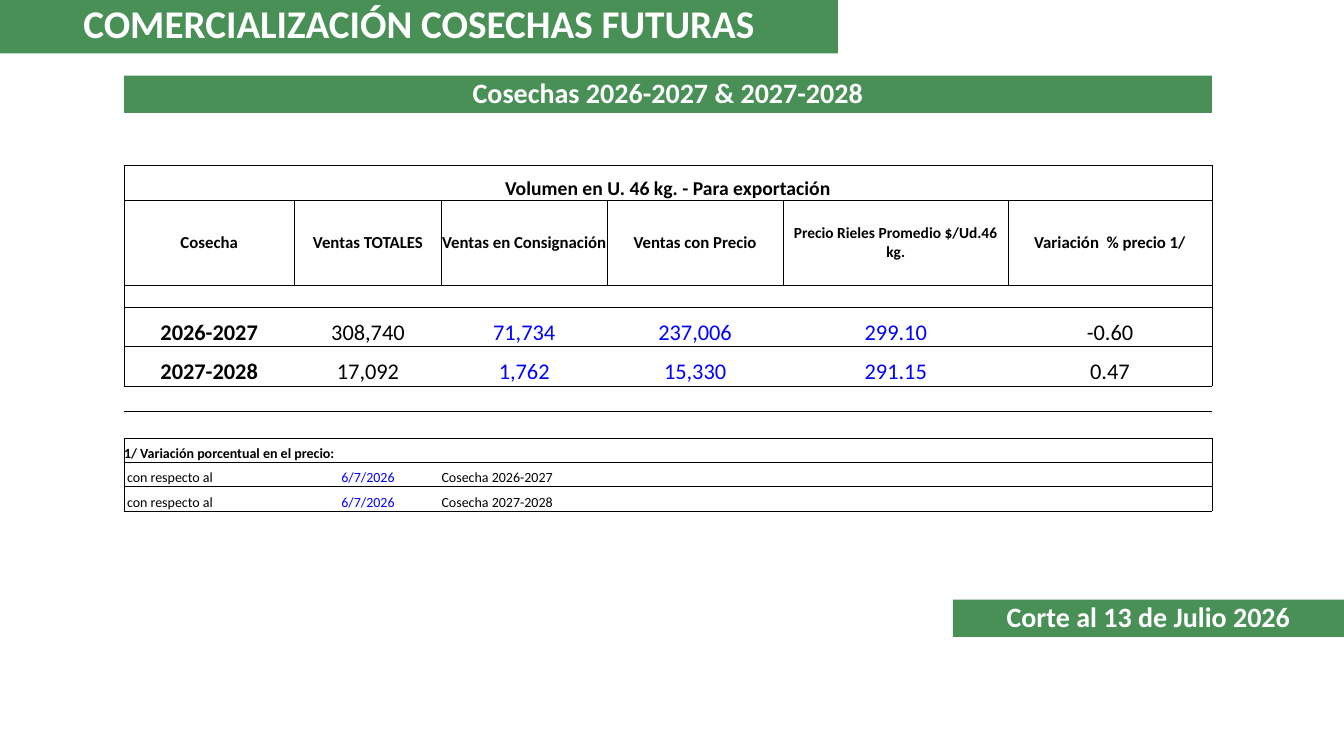
from dataclasses import dataclass
from lxml import etree
from pptx import Presentation
from pptx.dml.color import RGBColor
from pptx.enum.shapes import MSO_SHAPE
from pptx.enum.text import MSO_ANCHOR, MSO_AUTO_SIZE, PP_ALIGN
from pptx.oxml.ns import qn
from pptx.util import Inches, Pt

RECT = MSO_SHAPE.RECTANGLE
TOP, MID, LOW = MSO_ANCHOR.TOP, MSO_ANCHOR.MIDDLE, MSO_ANCHOR.BOTTOM
LEFT, MIDDLE = PP_ALIGN.LEFT, PP_ALIGN.CENTER

TITLE = "COMERCIALIZACIÓN COSECHAS FUTURAS"
CROPS = "Cosechas 2026-2027 & 2027-2028"
CUTOFF = "Corte al 13 de Julio 2026"
VOLUME = "Volumen en U. 46 kg. - Para exportación"
HEADS = ["Cosecha", "Ventas TOTALES", "Ventas en Consignación",
         "Ventas con Precio", "Precio Rieles Promedio $/Ud.46 kg.",
         "Variación  % precio 1/"]
SALES = [
    ["2026-2027", "308,740", "71,734", "237,006", "299.10", "-0.60"],
    ["2027-2028", "17,092", "1,762", "15,330", "291.15", "0.47"],
]
NOTE = "1/ Variación porcentual en el precio:"
NOTES = [
    ["con respecto al", "6/7/2026", "Cosecha 2026-2027"],
    ["con respecto al", "6/7/2026", "Cosecha 2027-2028"],
]
GRID = [[VOLUME], HEADS, [], *SALES, [], [], [NOTE], *NOTES]


@dataclass(frozen=True)
class Theme:
    font: str = "Calibri"
    green: str = "499057"
    white: str = "FFFFFF"
    black: str = "000000"
    blue: str = "0000FF"
    title: int = 28
    band: int = 20
    volume: int = 14
    head: int = 12
    price: int = 11
    sales: int = 16
    note: int = 10
    rule: float = 0.5


LOOK = Theme()
WIDE, HIGH = 13.33, 7.5
EDGE, SPAN = 1.23, 10.79
COLS = [1.69, 1.46, 1.64, 1.75, 2.23, 2.02]
ROWS = [0.35, 0.84, 0.22, 0.39, 0.39, 0.25, 0.27, 0.24, 0.24, 0.24]
LAST = len(COLS) - 1
RULED = {-1, 0, 1, 3, 4, 6, 8, 9}  # rows with a line below; -1 is the top edge
GAPS = {5, 6}  # rows between the two boxes
BOXED = {0, 1}  # rows with a line around every cell
NO_STYLE = "{2D5ABB26-0587-4C30-8999-92F81FD0307C}"


def write(frame, text, size, color, bold, align):
    frame.text = text
    par = frame.paragraphs[0]
    par.alignment = align
    for run in par.runs:
        font = run.font
        font.name, font.size, font.bold = LOOK.font, Pt(size), bold
        font.color.rgb = RGBColor.from_string(color)
    return par


def band(shape, box, text, size, anchor):
    """Turn a shape into a green strip with white text."""
    shape.left, shape.top, shape.width, shape.height = map(Inches, box)
    shape.fill.solid()
    shape.fill.fore_color.rgb = RGBColor.from_string(LOOK.green)
    shape.line.fill.background()
    frame = shape.text_frame
    frame.word_wrap = True
    frame.auto_size = MSO_AUTO_SIZE.NONE
    frame.vertical_anchor = anchor
    par = write(frame, text, size, LOOK.white, True, MIDDLE)
    par.line_spacing = 0.9


def style(row, col):
    """Give size, colour, boldness and alignment of a table cell."""
    if row == 0:
        return LOOK.volume, LOOK.black, True, MIDDLE
    if row == 1:
        size = LOOK.price if col == 4 else LOOK.head
        return size, LOOK.black, True, MIDDLE
    if row in (3, 4):
        color = LOOK.blue if 2 <= col <= 4 else LOOK.black
        return LOOK.sales, color, col == 0, MIDDLE
    if row > 7 and col == 1:
        return LOOK.note, LOOK.blue, False, MIDDLE
    return LOOK.note, LOOK.black, row == 7, LEFT


def outline(cell, row, col):
    boxed, gap = row in BOXED, row in GAPS
    sides = {
        "L": boxed or (col == 0 and not gap),
        "R": boxed or (col == LAST and not gap),
        "T": row - 1 in RULED,
        "B": row in RULED,
    }
    props = cell._tc.get_or_add_tcPr()
    for side, shown in sides.items():
        if shown:
            line = etree.SubElement(props, qn(f"a:ln{side}"),
                                    w=str(Pt(LOOK.rule)))
            fill = etree.SubElement(line, qn("a:solidFill"))
            etree.SubElement(fill, qn("a:srgbClr"), val=LOOK.black)


def fill_cell(cell, row, col):
    text = GRID[row][col] if col < len(GRID[row]) else ""
    cell.margin_left = cell.margin_right = 0
    cell.margin_top = cell.margin_bottom = 0
    if row > 7 and col == 0:
        cell.margin_left = Inches(0.03)
    cell.vertical_anchor = MID if row == 1 else LOW
    if text:
        write(cell.text_frame, text, *style(row, col))
    else:
        par = cell.text_frame.paragraphs[0]._p
        etree.SubElement(par, qn("a:endParaRPr"), sz=str(LOOK.note * 100))
    if not cell.is_spanned:
        outline(cell, row, col)
    cell.fill.background()


def add_sales(slide):
    frame = slide.shapes.add_table(
        len(ROWS), len(COLS), Inches(EDGE), Inches(1.64),
        Inches(SPAN), Inches(sum(ROWS)))
    table = frame.table
    table.first_row = table.horz_banding = False
    table._tbl.tblPr.find(qn("a:tableStyleId")).text = NO_STYLE
    for col, width in enumerate(COLS):
        table.columns[col].width = Inches(width)
    for row, height in enumerate(ROWS):
        table.rows[row].height = Inches(height)
    table.cell(0, 0).merge(table.cell(0, LAST))
    table.cell(7, 0).merge(table.cell(7, 2))
    for row in range(len(ROWS)):
        for col in range(len(COLS)):
            fill_cell(table.cell(row, col), row, col)


def main():
    deck = Presentation()
    deck.slide_width, deck.slide_height = Inches(WIDE), Inches(HIGH)
    slide = deck.slides.add_slide(deck.slide_layouts[5])
    band(slide.shapes.title, (0, 0, 8.31, 0.53), TITLE, LOOK.title, TOP)
    strips = [
        (CROPS, (EDGE, 0.75, SPAN, 0.37)),
        (CUTOFF, (WIDE - 3.88, 5.95, 3.88, 0.37)),
    ]
    for text, box in strips:
        shape = slide.shapes.add_shape(RECT, *map(Inches, box))
        shape.shadow.inherit = False
        band(shape, box, text, LOOK.band, MID)
    add_sales(slide)
    deck.save("out.pptx")


if __name__ == "__main__":
    main()
